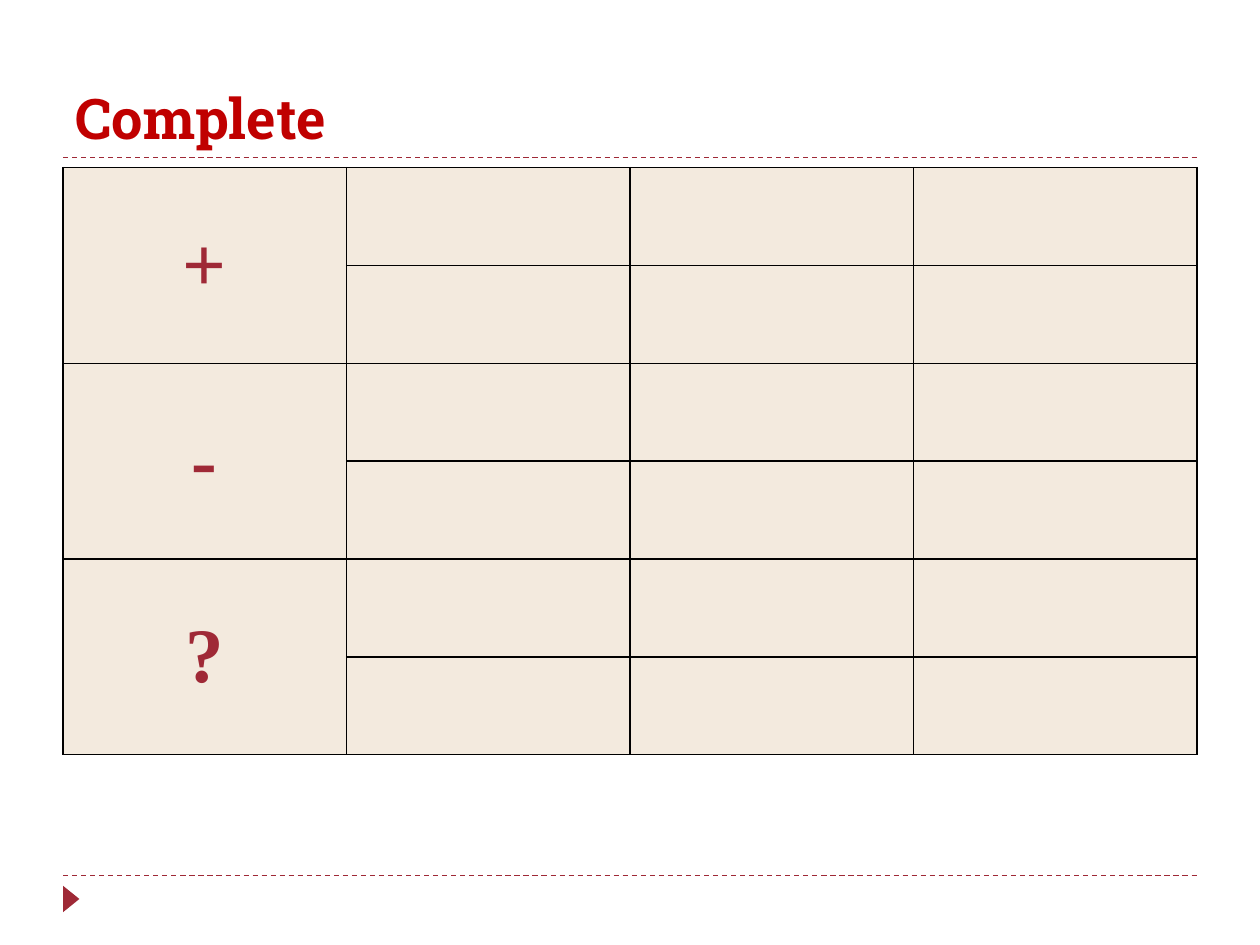
"""Build a slide with an empty sentence-form table to complete."""
import dataclasses

import lxml.etree
import pptx
import pptx.dml.color
import pptx.enum.dml
import pptx.enum.shapes
import pptx.enum.text
import pptx.oxml.ns
import pptx.util
from pptx.util import Inches

ACCENT = "9F2936"
TITLE_RED = "C00000"
CELL_FILL = "F3EADE"
BORDER = "000000"
LEFT, WIDTH = 0.5, 9
COLUMNS = 4
ROWS_PER_FORM = 2


@dataclasses.dataclass
class Form:
    symbol: str
    first_row: int


FORMS = [Form(symbol, index * ROWS_PER_FORM) for index, symbol in enumerate("+-?")]
ROWS = len(FORMS) * ROWS_PER_FORM


def color(value: str) -> pptx.dml.color.RGBColor:
    return pptx.dml.color.RGBColor.from_string(value)


def write(frame, text: str, *, size: float, font: str, fill: str, align) -> None:
    para = frame.paragraphs[0]
    para.alignment = align
    span = para.add_run()
    span.text = text
    span.font.size = pptx.util.Pt(size)
    span.font.name = font
    span.font.bold = True
    span.font.color.rgb = color(fill)


def add_rule(page, top: float) -> None:
    rule = page.shapes.add_connector(
        pptx.enum.shapes.MSO_CONNECTOR.STRAIGHT,
        Inches(LEFT), Inches(top), Inches(LEFT + WIDTH), Inches(top))
    rule.line.color.rgb = color(ACCENT)
    rule.line.width = pptx.util.Pt(0.75)
    rule.line.dash_style = pptx.enum.dml.MSO_LINE.DASH
    properties = rule._element.spPr
    lxml.etree.SubElement(properties, pptx.oxml.ns.qn("a:effectLst"))


def add_marker(page) -> None:
    marker = page.shapes.add_shape(
        pptx.enum.shapes.MSO_SHAPE.ISOSCELES_TRIANGLE,
        Inches(0.46), Inches(7.07), Inches(0.21), Inches(0.13))
    marker.rotation = 90
    marker.shadow.inherit = False
    marker.fill.solid()
    marker.fill.fore_color.rgb = color(ACCENT)
    marker.line.fill.background()


def style_cell(cell) -> None:
    cell.fill.solid()
    cell.fill.fore_color.rgb = color(CELL_FILL)
    properties = cell._tc.get_or_add_tcPr()
    for index, side in enumerate(("lnL", "lnR", "lnT", "lnB")):
        edge = lxml.etree.Element(
            pptx.oxml.ns.qn(f"a:{side}"), w=str(pptx.util.Pt(1)))
        paint = lxml.etree.SubElement(edge, pptx.oxml.ns.qn("a:solidFill"))
        lxml.etree.SubElement(paint, pptx.oxml.ns.qn("a:srgbClr"), val=BORDER)
        properties.insert(index, edge)


def add_form_table(page) -> None:
    table = page.shapes.add_table(
        ROWS, COLUMNS, Inches(LEFT), Inches(1.33), Inches(WIDTH), Inches(4.66)).table
    table.first_row = False
    table.horz_banding = False
    for cell in table.iter_cells():
        style_cell(cell)
    for form in FORMS:
        cell = table.cell(form.first_row, 0)
        cell.merge(table.cell(form.first_row + ROWS_PER_FORM - 1, 0))
        cell.vertical_anchor = pptx.enum.text.MSO_ANCHOR.MIDDLE
        write(cell.text_frame, form.symbol, size=44, font="Times New Roman",
              fill=ACCENT, align=pptx.enum.text.PP_ALIGN.CENTER)


def add_title(page, text: str) -> None:
    title = page.shapes.title
    title.left, title.top = Inches(LEFT), Inches(0.17)
    title.width, title.height = Inches(WIDTH), Inches(1.08)
    frame = title.text_frame
    frame.auto_size = pptx.enum.text.MSO_AUTO_SIZE.NONE
    frame.vertical_anchor = pptx.enum.text.MSO_ANCHOR.BOTTOM
    write(frame, text, size=32, font="Roboto Slab",
          fill=TITLE_RED, align=pptx.enum.text.PP_ALIGN.LEFT)


def main() -> None:
    deck = pptx.Presentation()
    deck.slide_width, deck.slide_height = Inches(10), Inches(7.5)
    page = deck.slides.add_slide(deck.slide_layouts[5])
    for top in (6.95, 1.25):
        add_rule(page, top)
    add_marker(page)
    add_title(page, "Complete")
    add_form_table(page)
    deck.save("out.pptx")


if __name__ == "__main__":
    main()
